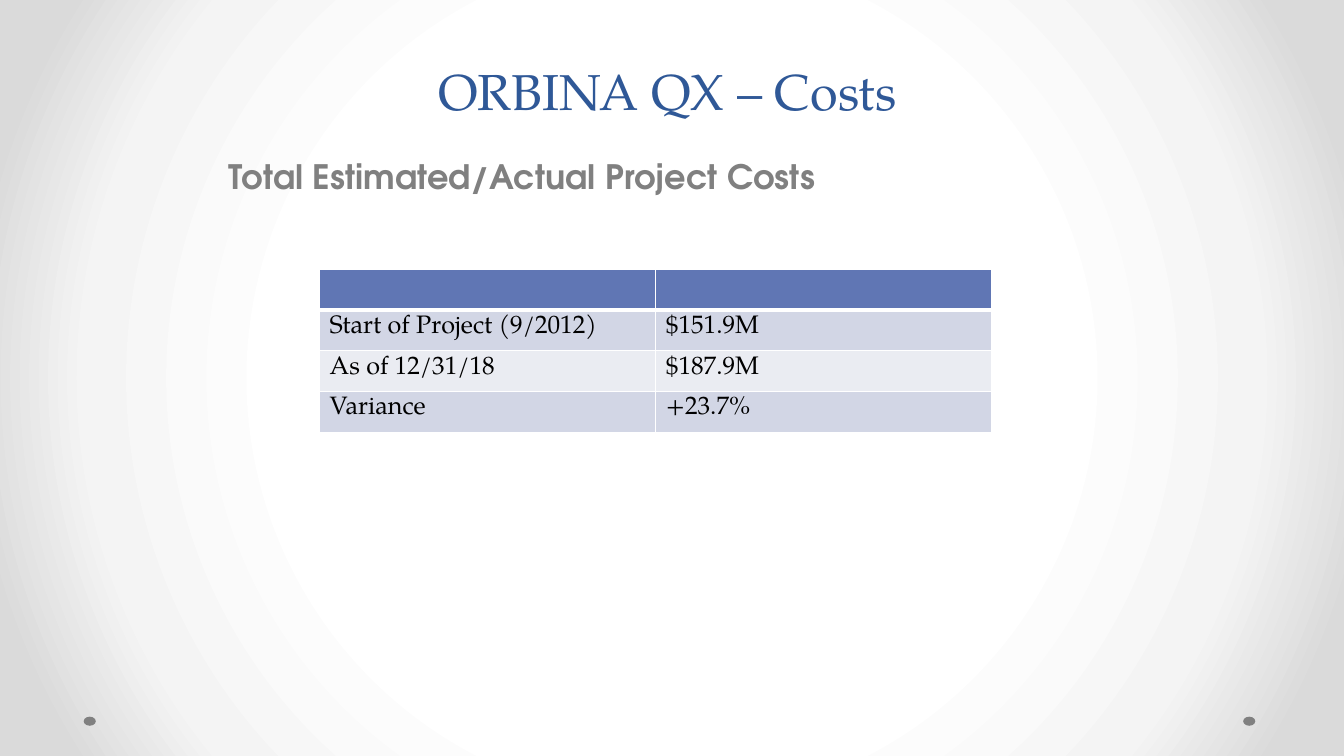
import pptx
import pptx.enum.shapes
import pptx.enum.text
import pptx.oxml
import pptx.oxml.ns
import pptx.util
from pptx.dml.color import RGBColor
from pptx.util import Inches

WHITE = RGBColor(0xFF, 0xFF, 0xFF)
BLACK = RGBColor(0x00, 0x00, 0x00)
GRAY = RGBColor(0x80, 0x80, 0x80)
LIGHT_GRAY = RGBColor(0xF4, 0xF4, 0xF4)
EDGE_GRAY = RGBColor(0xDA, 0xDA, 0xDA)
TITLE_BLUE = RGBColor(0x2F, 0x58, 0x97)
HEADER_BLUE = RGBColor(0x60, 0x76, 0xB4)
BAND_DARK = RGBColor(0xD2, 0xD6, 0xE5)
BAND_LIGHT = RGBColor(0xEA, 0xEC, 0xF2)

SERIF = "TeX Gyre Pagella"
SANS = "TeX Gyre Adventor"
NAMESPACE = pptx.oxml.ns.nsdecls("a")

COSTS = [
    ("", ""),
    ("Start of Project (9/2012)", "$151.9M"),
    ("As of 12/31/18", "$187.9M"),
    ("Variance", "+23.7%"),
]


def write_text(text_frame, text, *, font, size, color, bold=False,
               alignment=pptx.enum.text.PP_ALIGN.LEFT, line_spacing=None):
    paragraph = text_frame.paragraphs[0]
    paragraph.alignment = alignment
    paragraph.line_spacing = line_spacing
    paragraph.space_before = pptx.util.Pt(0)
    run = paragraph.add_run()
    run.text = text
    run.font.name = font
    run.font.size = pptx.util.Pt(size)
    run.font.bold = bold
    run.font.color.rgb = color
    return paragraph


def place(shape, left, top, width, height):
    shape.left, shape.top = Inches(left), Inches(top)
    shape.width, shape.height = Inches(width), Inches(height)


def add_background(slide):
    """Fill the slide with a gradient that darkens outward from the centre."""
    slide.background.fill.gradient()
    gradient = slide.element.find(".//" + pptx.oxml.ns.qn("a:gradFill"))
    for child in list(gradient):
        gradient.remove(child)
    stops = "".join(
        f'<a:gs pos="{percent * 1000}"><a:srgbClr val="{color}"/></a:gs>'
        for percent, color in ((50, WHITE), (76, LIGHT_GRAY), (92, EDGE_GRAY)))
    gradient.append(pptx.oxml.parse_xml(f"<a:gsLst {NAMESPACE}>{stops}</a:gsLst>"))
    gradient.append(pptx.oxml.parse_xml(
        f'<a:path {NAMESPACE} path="circle">'
        '<a:fillToRect l="50000" t="50000" r="50000" b="50000"/></a:path>'))


def add_corner_dots(slide, lefts, top, width, height):
    for left in lefts:
        dot = slide.shapes.add_shape(
            pptx.enum.shapes.MSO_SHAPE.OVAL,
            Inches(left), Inches(top), Inches(width), Inches(height))
        dot.shadow.inherit = False
        dot.fill.solid()
        dot.fill.fore_color.rgb = GRAY
        dot.line.fill.background()


def fill_title(title, left, top, width, height):
    place(title, left, top, width, height)
    title.text_frame.auto_size = pptx.enum.text.MSO_AUTO_SIZE.NONE
    title.text_frame.vertical_anchor = pptx.enum.text.MSO_ANCHOR.BOTTOM
    write_text(title.text_frame, "ORBINA QX – Costs", font=SERIF, size=36,
               color=TITLE_BLUE, alignment=pptx.enum.text.PP_ALIGN.CENTER,
               line_spacing=pptx.util.Pt(58))


def fill_body(body, left, top, width, height):
    place(body, left, top, width, height)
    body.text_frame.auto_size = pptx.enum.text.MSO_AUTO_SIZE.NONE
    paragraph = write_text(body.text_frame, "Total Estimated/Actual Project Costs",
                           font=SANS, size=24, color=GRAY, bold=True)
    properties = paragraph._p.get_or_add_pPr()
    properties.set("marL", "0")
    properties.set("indent", "0")
    properties.append(pptx.oxml.parse_xml(f"<a:buNone {NAMESPACE}/>"))


def set_borders(cell, **widths):
    """Draw white borders; keywords L, R, T and B give widths in points."""
    properties = cell._tc.get_or_add_tcPr()
    for index, side in enumerate("LRTB"):
        properties.insert(index, pptx.oxml.parse_xml(
            f'<a:ln{side} {NAMESPACE} w="{pptx.util.Pt(widths.get(side, 1))}">'
            f'<a:solidFill><a:srgbClr val="{WHITE}"/></a:solidFill></a:ln{side}>'))


def add_cost_table(slide, left, top, width, height):
    table = slide.shapes.add_table(
        len(COSTS), len(COSTS[0]), Inches(left), Inches(top),
        Inches(width), Inches(height)).table
    for row_index, values in enumerate(COSTS):
        if row_index == 0:
            fill_color, borders = HEADER_BLUE, {"B": 3}
        else:
            fill_color = BAND_DARK if row_index % 2 else BAND_LIGHT
            borders = {"T": 3} if row_index == 1 else {}
        for column_index, value in enumerate(values):
            cell = table.cell(row_index, column_index)
            cell.fill.solid()
            cell.fill.fore_color.rgb = fill_color
            set_borders(cell, **borders)
            if value:
                write_text(cell.text_frame, value, font=SERIF, size=18, color=BLACK)


def build_cost_slide(presentation):
    slide = presentation.slides.add_slide(presentation.slide_layouts[1])
    add_background(slide)
    add_corner_dots(slide, (0.83, 12.33), 7.11, 0.12, 0.09)
    fill_title(slide.shapes.title, 1.83, 0.17, 9.58, 1.08)
    fill_body(slide.placeholders[1], 2.17, 1.5, 9, 5.42)
    add_cost_table(slide, 3.17, 2.67, 6.67, 1.62)


def main():
    presentation = pptx.Presentation()
    presentation.slide_width = Inches(13.33)
    presentation.slide_height = Inches(7.5)
    build_cost_slide(presentation)
    presentation.save("out.pptx")


if __name__ == "__main__":
    main()
